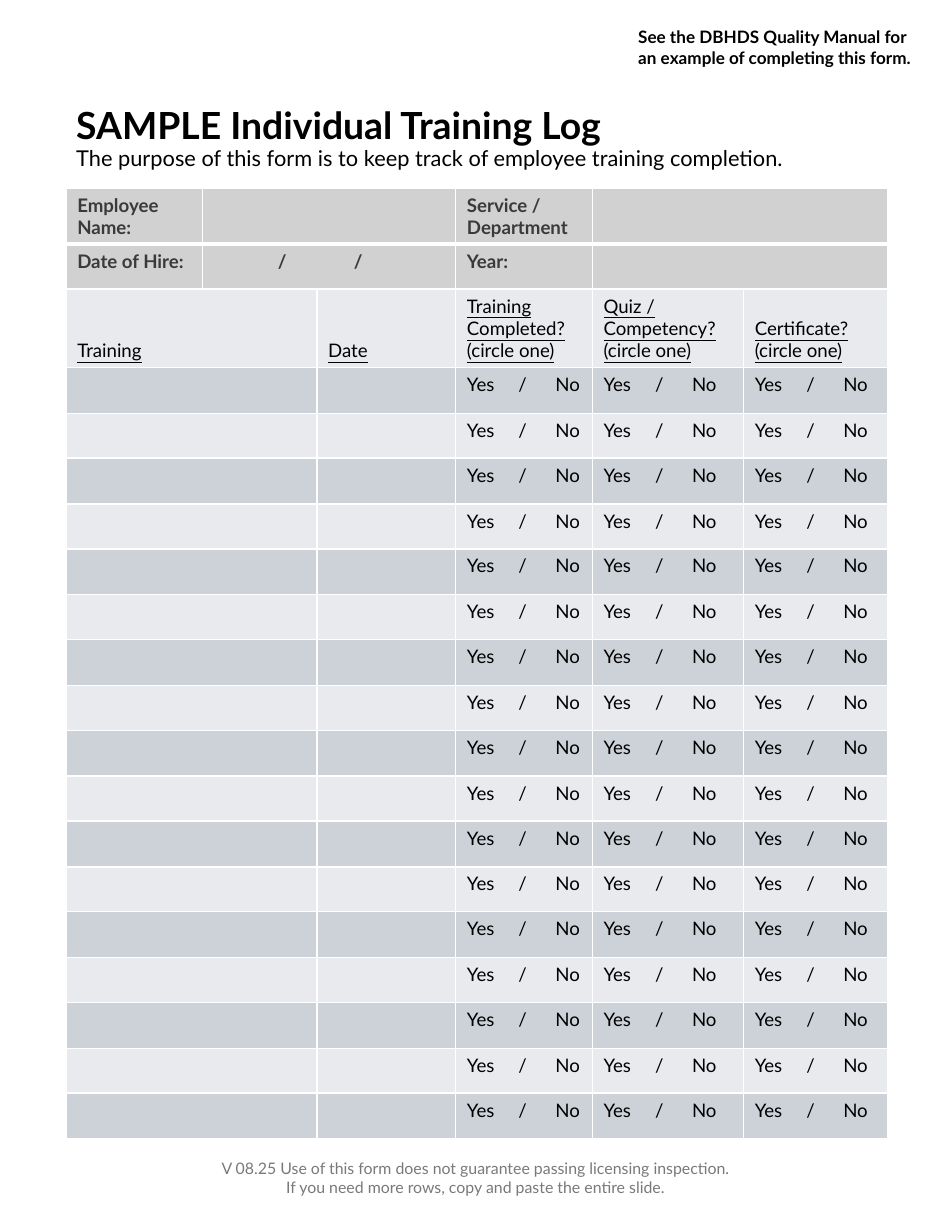
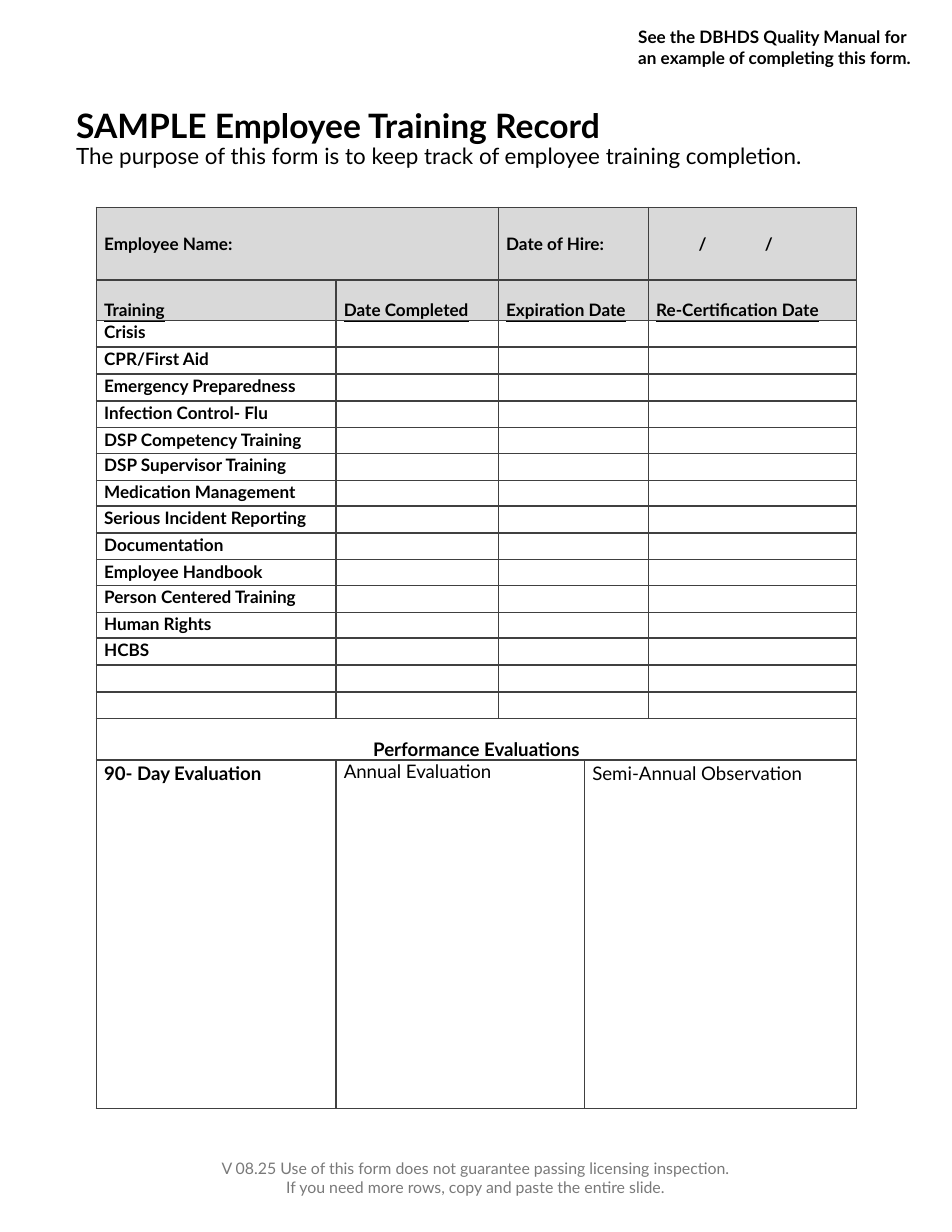
from lxml import etree
from pptx import Presentation
from pptx.dml.color import RGBColor
from pptx.enum.text import MSO_ANCHOR, MSO_AUTO_SIZE, PP_ALIGN
from pptx.oxml.ns import qn
from pptx.util import Pt

TOP, MIDDLE, BOTTOM = MSO_ANCHOR.TOP, MSO_ANCHOR.MIDDLE, MSO_ANCHOR.BOTTOM
LEFT, CENTER = PP_ALIGN.LEFT, PP_ALIGN.CENTER
GROW, FIXED = MSO_AUTO_SIZE.SHAPE_TO_FIT_TEXT, MSO_AUTO_SIZE.NONE
FONT = "Lato"
PX = 9144
HEX = {
    "black": "000000", "white": "FFFFFF", "label": "3A3A3A", "foot": "797979",
    "head": "D1D1D1", "pale": "E8EAED", "band": "CCD2D8",
    "gray": "D9D9D9", "rule": "404040",
}
PURPOSE = "The purpose of this form is to keep track of employee training completion."
NOTE = "See the DBHDS Quality Manual for an example of completing this form."
FOOT = ("V 08.25 Use of this form does not guarantee passing licensing inspection.\n"
        "If you need more rows, copy and paste the entire slide.")
TOPICS = [
    "Crisis", "CPR/First Aid", "Emergency Preparedness", "Infection Control- Flu",
    "DSP Competency Training", "DSP Supervisor Training", "Medication Management",
    "Serious Incident Reporting", "Documentation", "Employee Handbook",
    "Person Centered Training", "Human Rights", "HCBS", "", "",
]
HEIGHTS = [24, 24, 24, 24, 23, 24, 23, 24, 24, 23, 24, 23, 24, 24, 24]


class Form:
    """Holds the shared form style and the current slide."""

    def __init__(self):
        self.deck = Presentation()
        self.deck.slide_width, self.deck.slide_height = 850 * PX, 1100 * PX
        self.layout = self.deck.slide_layouts[5]
        self.slide = None

    def style(self, run, size, color="black", bold=False, under=False):
        font = run.font
        font.name, font.size, font.bold, font.underline = FONT, Pt(size), bold, under
        font.color.rgb = RGBColor.from_string(HEX[color])

    def text(self, x, y, w, h, words, size, color, bold=False, align=LEFT,
             anchor=TOP, fit=FIXED):
        box = self.slide.shapes.add_textbox(x * PX, y * PX, w * PX, h * PX)
        frame = box.text_frame
        frame.text = words
        frame.word_wrap, frame.auto_size, frame.vertical_anchor = True, fit, anchor
        for para in frame.paragraphs:
            para.alignment = align
            for run in para.runs:
                self.style(run, size, color, bold)
        return box

    def page(self, title, size, small):
        first = self.slide is None
        self.slide = self.deck.slides.add_slide(self.layout)
        if first:
            foot = self.text(58, 1033, 733, 37, FOOT, 10.2, "foot",
                             align=CENTER, anchor=MIDDLE)
            self.layout.shapes.element.append(foot.element)
        head = self.slide.shapes.title
        head.left, head.top, head.width, head.height = 58 * PX, 99 * PX, 733 * PX, 51 * PX
        frame = head.text_frame
        frame.word_wrap, frame.auto_size, frame.vertical_anchor = True, FIXED, MIDDLE
        para = frame.paragraphs[0]
        para.text = title + "\v" + PURPOSE
        para.alignment, para.line_spacing = LEFT, 0.9
        self.style(para.runs[0], size, bold=True)
        self.style(para.runs[1], small)

    def note(self):
        self.text(560, 19, 273, 47, NOTE, 11, "black", True, fit=GROW)

    def table(self, x, y, cols, rows):
        shape = self.slide.shapes.add_table(
            len(rows), len(cols), x * PX, y * PX, sum(cols) * PX, sum(rows) * PX)
        grid = shape.table
        grid.first_row = grid.horz_banding = False
        for col, wide in zip(grid.columns, cols):
            col.width = wide * PX
        for row, high in zip(grid.rows, rows):
            row.height = high * PX
        return grid

    def edges(self, cell, color, base=1):
        props = cell._tc.get_or_add_tcPr()
        for side in "LRTB":
            wide = base if side == "B" else 1
            line = etree.SubElement(props, qn("a:ln" + side), w=str(Pt(wide)))
            fill = etree.SubElement(line, qn("a:solidFill"))
            etree.SubElement(fill, qn("a:srgbClr"), val=HEX[color])

    def paint(self, grid, row, fill, line, base=1):
        for cell in grid.rows[row].cells:
            self.edges(cell, line, base)
            if fill:
                cell.fill.solid()
                cell.fill.fore_color.rgb = RGBColor.from_string(HEX[fill])
            else:
                cell.fill.background()

    def cell(self, grid, row, col, words="", span=1, size=12, color="black",
             bold=False, under=False, anchor=TOP, align=LEFT, tabs=(),
             tight=False, loose=False):
        cell = grid.cell(row, col)
        if span > 1:
            cell.merge(grid.cell(row, col + span - 1))
        cell.vertical_anchor = anchor
        if tight:
            cell.margin_left = cell.margin_right = 7 * PX
            cell.margin_top = cell.margin_bottom = 0
        para = cell.text_frame.paragraphs[0]
        para.text = words
        para.alignment = align
        if loose:
            para.line_spacing, para.space_after = 1.07, Pt(8)
        if tabs:
            stops = etree.SubElement(para._p.get_or_add_pPr(), qn("a:tabLst"))
            for stop in tabs:
                etree.SubElement(stops, qn("a:tab"), pos=str(stop * PX), algn="l")
        for run in para.runs:
            self.style(run, size, color, bold, under)
        if not words:
            etree.SubElement(para._p, qn("a:endParaRPr"), sz=str(size * 100))


def log(form):
    form.page("SAMPLE Individual Training Log", 24, 14)
    rows = [50, 40, 70] + [40 + row % 2 for row in range(3, 20)]
    grid = form.table(59, 168, [122, 102, 124, 122, 135, 129], rows)
    label = {"color": "label", "bold": True}
    tops = [("Employee Name:", "", "Service / Department"),
            ("Date of Hire:", "\t/\t/", "Year:")]
    for row, (name, date, unit) in enumerate(tops):
        form.paint(grid, row, "head", "white", 1 if row else 3)
        form.cell(grid, row, 0, name, **label)
        form.cell(grid, row, 1, date, 2, tabs=(57, 125) if date else (), **label)
        form.cell(grid, row, 3, unit, **label)
        form.cell(grid, row, 4, span=2)
    form.paint(grid, 2, "pale", "white")
    heads = [(0, "Training", 2), (2, "Date", 1), (3, "Training Completed? (circle one)", 1),
             (4, "Quiz / Competency? (circle one)", 1), (5, "Certificate? (circle one)", 1)]
    for col, words, span in heads:
        form.cell(grid, 2, col, words, span, under=True, anchor=BOTTOM)
    for row in range(3, 20):
        form.paint(grid, row, "band" if row % 2 else "pale", "white")
        form.cell(grid, row, 0, span=2)
        form.cell(grid, row, 2)
        for col in (3, 4, 5):
            form.cell(grid, row, col, "Yes\t/\tNo", tabs=(46, 79))
    form.note()


def record(form):
    form.page("SAMPLE Employee Training Record", 21.6, 14.4)
    grid = form.table(86, 185, [214, 145, 77, 57, 186], [65, 36] + HEIGHTS + [37, 311])
    for row in range(19):
        form.paint(grid, row, "gray" if row < 2 else None, "rule")
    plain = {"tight": True, "loose": True}
    bold = {"size": 11, "bold": True, **plain}
    form.cell(grid, 0, 0, "Employee Name:", 2, anchor=MIDDLE, **bold)
    form.cell(grid, 0, 2, "Date of Hire:", 2, anchor=MIDDLE, **bold)
    form.cell(grid, 0, 4, "\t/\t/", anchor=MIDDLE, tabs=(38, 97), **bold)
    heads = [(0, "Training", 1), (1, "Date Completed", 1),
             (2, "Expiration Date", 2), (4, "Re-Certification Date", 1)]
    for col, words, span in heads:
        form.cell(grid, 1, col, words, span, under=True, anchor=BOTTOM, **bold)
    for row, topic in enumerate(TOPICS, 2):
        for col, _, span in heads:
            form.cell(grid, row, col, "" if col else topic, span, **bold)
    form.cell(grid, 17, 0, "Performance Evaluations", 5, bold=True,
              anchor=BOTTOM, align=CENTER, **plain)
    form.cell(grid, 18, 0, "90- Day Evaluation", bold=True, **plain)
    form.cell(grid, 18, 1, "Annual Evaluation", 2, tight=True)
    form.cell(grid, 18, 3, "Semi-Annual Observation", 2, **plain)
    form.note()


def main():
    form = Form()
    log(form)
    record(form)
    form.deck.save("out.pptx")


if __name__ == "__main__":
    main()
